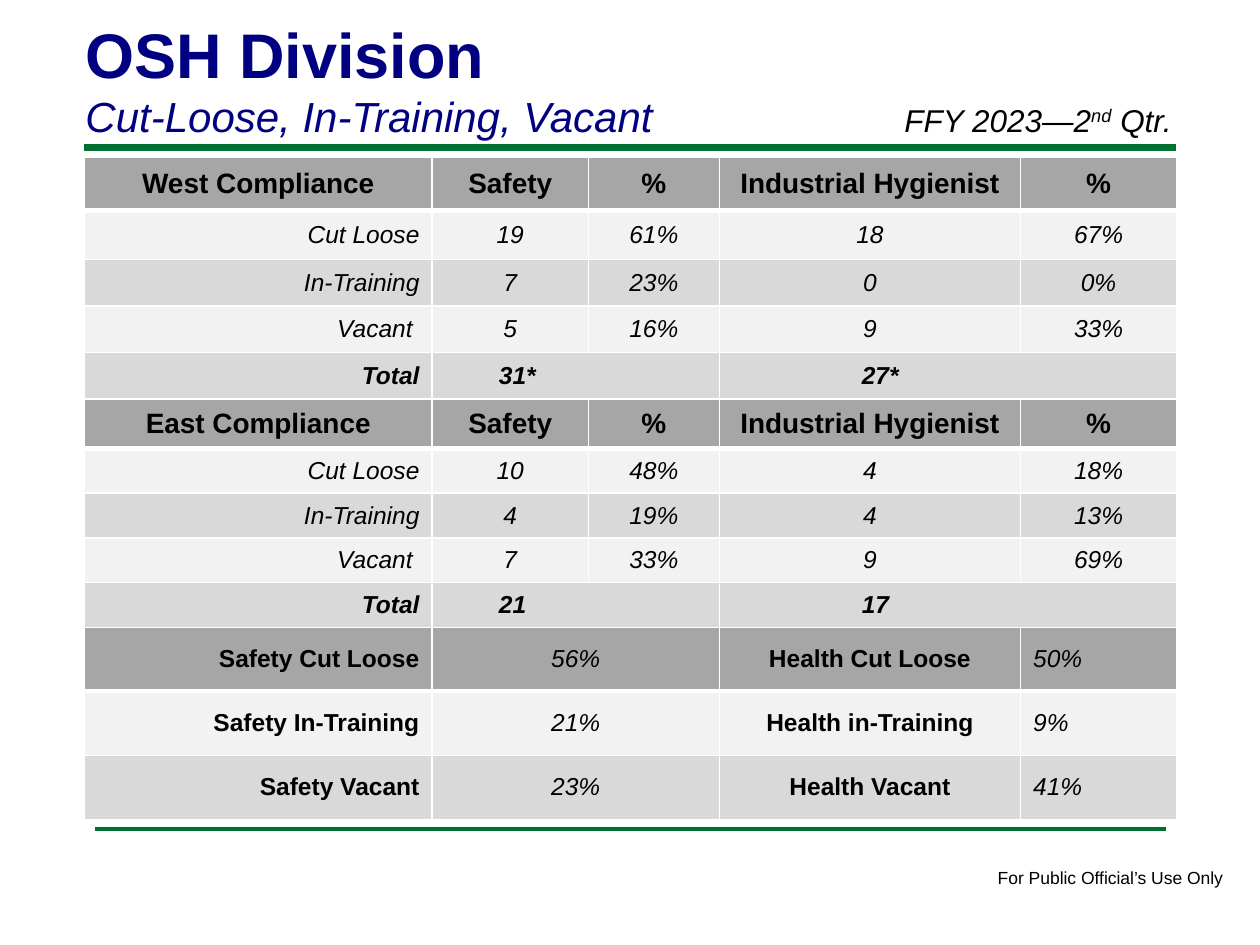
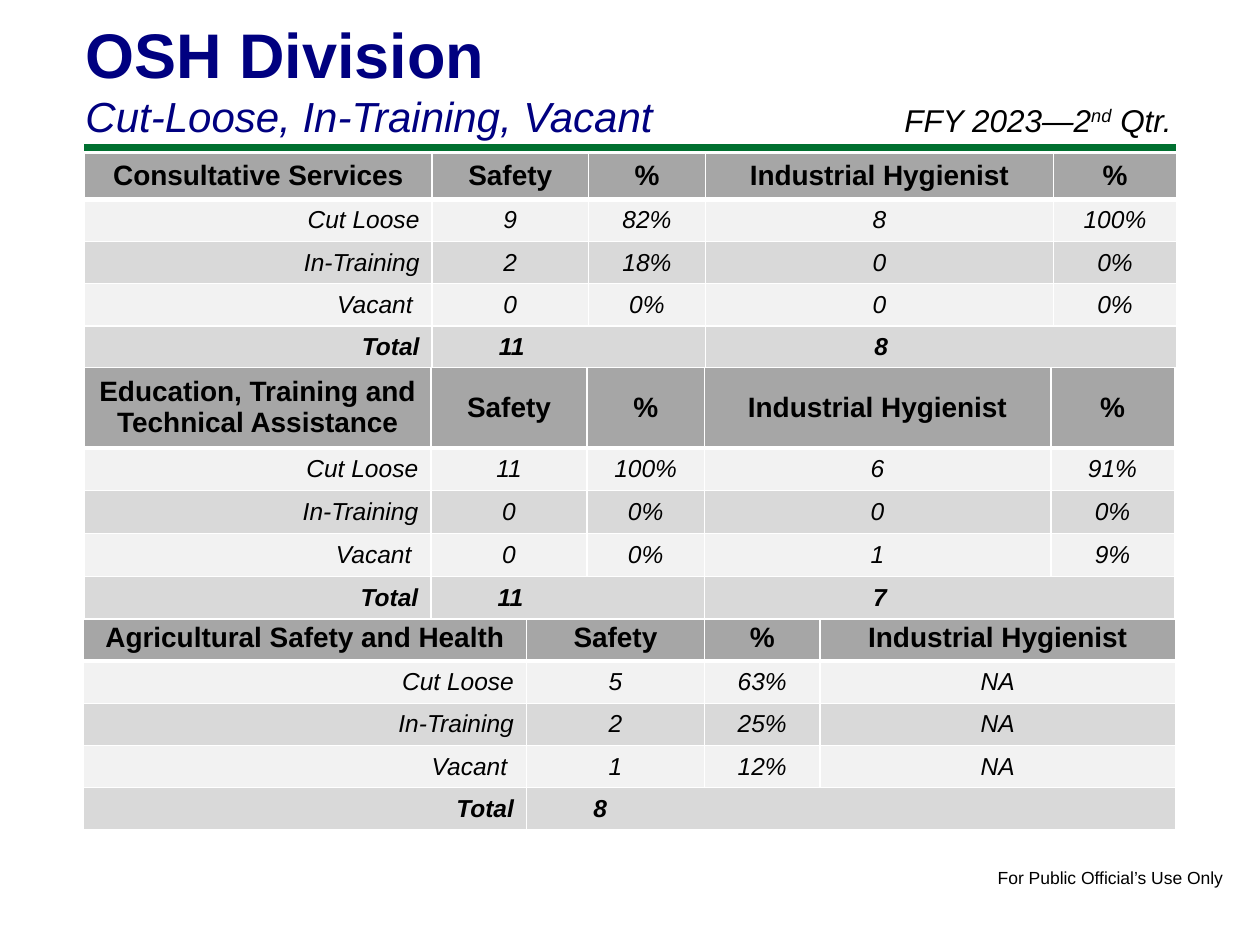
from dataclasses import dataclass
from typing import NamedTuple, Optional

from lxml.etree import SubElement
from pptx import Presentation
from pptx.dml.color import RGBColor
from pptx.enum.shapes import MSO_CONNECTOR
from pptx.enum.text import MSO_ANCHOR, PP_ALIGN
from pptx.oxml.ns import qn
from pptx.util import Inches, Length, Pt

# The slide is a grid of 100 columns by 75 rows.
GRID_COLUMNS, GRID_ROWS = 100, 75
SLIDE_WIDTH, SLIDE_HEIGHT = Inches(10), Inches(7.5)
FONT = "Arial"
COLORS = {
    "rule": "007030",
    "title": "000080",
    "text": "000000",
    "header": "A6A6A6",
    "odd": "F2F2F2",
    "even": "D9D9D9",
    "border": "FFFFFF",
}
THIN, THICK = 1, 3
LEFT, CENTER, RIGHT = PP_ALIGN.LEFT, PP_ALIGN.CENTER, PP_ALIGN.RIGHT
TABLE_LEFT = 6.7
STAFF_HEADINGS = ("Safety", "%", "Industrial Hygienist", "%")
STAFF_LABELS = ("Cut Loose", "In-Training", "Vacant ")

Row = tuple[Optional[str], ...]


class Span(NamedTuple):
    text: str
    size: int
    color: str = "text"
    bold: bool = False
    italic: bool = False
    raised: bool = False


class TextBox(NamedTuple):
    left: float
    top: float
    width: float
    height: float
    paras: list[list[Span]]
    anchor: MSO_ANCHOR = MSO_ANCHOR.TOP
    wrap: bool = True


class Rule(NamedTuple):
    left: float
    right: float
    row: float
    weight: int


class CellStyle(NamedTuple):
    size: int
    bold: bool
    italic: bool
    align: PP_ALIGN
    indent: float = 1


HEADING = CellStyle(16, True, False, CENTER)
LABEL = CellStyle(14, False, True, RIGHT)
VALUE = CellStyle(14, False, True, CENTER)
TOTAL_LABEL = CellStyle(14, True, True, RIGHT)
SUMMARY_STYLES = [
    CellStyle(14, True, False, RIGHT),
    VALUE,
    CellStyle(14, True, False, CENTER),
    CellStyle(14, False, True, LEFT),
]


@dataclass
class TableBlock:
    """A table whose None cells continue the cell to their left."""

    left: float
    top: float
    columns: list[float]
    heights: list[float]
    rows: list[Row]
    styles: list[list[CellStyle]]


def staffing(
    heading: str,
    top: float,
    columns: list[float],
    heights: list[float],
    counts: list[Row],
    totals: Row,
    hygienist_indent: float = 1,
    left: float = TABLE_LEFT,
) -> TableBlock:
    """One unit's safety and hygienist posts, closed by a row of totals."""
    values = len(columns) - 1
    rows = [(heading, *STAFF_HEADINGS[:values])]
    rows += [(label, *count) for label, count in zip(STAFF_LABELS, counts)]
    rows.append(("Total", *totals))
    safety_total = CellStyle(14, True, True, LEFT, 5.3)
    hygienist_total = safety_total._replace(indent=hygienist_indent)
    styles = [
        [HEADING] * len(columns),
        *[[LABEL] + [VALUE] * values for _ in counts],
        [TOTAL_LABEL] + [safety_total] * 2 + [hygienist_total] * (values - 2),
    ]
    return TableBlock(left, top, columns, heights, rows, styles)


SHARED_RULES = [Rule(6.7, 93.3, 11.7, 4), Rule(7.5, 92.5, 65.8, 2)]
SHARED_BOXES = [
    TextBox(78.2, 68.3, 20.1, 2.7,
            [[Span("For Public Official’s Use Only", 10)]], wrap=False),
    TextBox(5.8, 0.6, 82.5, 11.1, [
        [Span("OSH Division", 36, "title", bold=True)],
        [Span("Cut-Loose, In-Training, Vacant", 24, "title", italic=True)],
    ], MSO_ANCHOR.BOTTOM),
    TextBox(70.8, 7.5, 25, 4, [[
        Span("FFY 2023—2", 18, italic=True),
        Span("nd", 18, italic=True, raised=True),
        Span(" Qtr.", 18, italic=True),
    ]]),
]

COMPLIANCE_COLUMNS = [27.6, 12.4, 10.4, 23.9, 12.4]
SERVICE_COLUMNS = [27.6, 12.4, 9.3, 27.6, 9.8]
TRAINING_COLUMNS = [27.5, 12.4, 9.3, 27.5, 9.8]

COMPLIANCE_TABLES = [
    staffing(
        "West Compliance", 12.5, COMPLIANCE_COLUMNS, [4.2, 3.9] + [3.7] * 3,
        [("19", "61%", "18", "67%"), ("7", "23%", "0", "0%"), ("5", "16%", "9", "33%")],
        ("31*", None, "27*", None), 11.3,
    ),
    TableBlock(
        TABLE_LEFT, 49.75, [27.6, 22.8, 23.9, 12.4], [5.1] * 3,
        [
            ("Safety Cut Loose", "56%", "Health Cut Loose", "50%"),
            ("Safety In-Training", "21%", "Health in-Training", "9%"),
            ("Safety Vacant", "23%", "Health Vacant", "41%"),
        ],
        [SUMMARY_STYLES] * 3,
    ),
    staffing(
        "East Compliance", 31.7, COMPLIANCE_COLUMNS, [3.9] + [3.55] * 4,
        [("10", "48%", "4", "18%"), ("4", "19%", "4", "13%"), ("7", "33%", "9", "69%")],
        ("21", None, "17", None), 11.3,
    ),
]
SERVICE_TABLES = [
    staffing(
        "Consultative Services", 12.15, SERVICE_COLUMNS, [3.6] + [3.35] * 4,
        [("9", "82%", "8", "100%"), ("2", "18%", "0", "0%"), ("0", "0%", "0", "0%")],
        ("11", None, "8", None), 13.4,
    ),
    staffing(
        "Agricultural Safety and Health", 48.8, [35.2, 14.1, 9.2, 28.2],
        [3.6] + [3.35] * 4,
        [("5", "63%", "NA"), ("2", "25%", "NA"), ("1", "12%", "NA")],
        ("8", None, None), left=6.6,
    ),
    staffing(
        "Education, Training and Technical Assistance", 29.15, TRAINING_COLUMNS,
        [6.4] + [3.4] * 4,
        [("11", "100%", "6", "91%"), ("0", "0%", "0", "0%"), ("0", "0%", "1", "9%")],
        ("11", None, "7", None), 13.4,
    ),
]


def across(columns: float) -> Length:
    return Length(round(SLIDE_WIDTH * columns / GRID_COLUMNS))


def down(rows: float) -> Length:
    return Length(round(SLIDE_HEIGHT * rows / GRID_ROWS))


def rgb(name: str) -> RGBColor:
    return RGBColor.from_string(COLORS[name])


def add_span(para, span: Span) -> None:
    run = para.add_run()
    run.text = span.text
    formats = {"name": FONT, "size": Pt(span.size), "bold": span.bold, "italic": span.italic}
    for attribute, value in formats.items():
        setattr(run.font, attribute, value)
    run.font.color.rgb = rgb(span.color)
    if span.raised:
        run.font._element.set("baseline", "30000")


def draw_rule(page, rule: Rule) -> None:
    line = page.shapes.add_connector(
        MSO_CONNECTOR.STRAIGHT,
        across(rule.left), down(rule.row), across(rule.right), down(rule.row),
    )
    line.line.color.rgb = rgb("rule")
    line.line.width = Pt(rule.weight)
    SubElement(line._element.spPr, qn("a:effectLst"))


def draw_text(page, item: TextBox) -> None:
    box = page.shapes.add_textbox(
        across(item.left), down(item.top), across(item.width), down(item.height)
    )
    frame = box.text_frame
    frame.word_wrap = item.wrap
    frame.vertical_anchor = item.anchor
    for index, spans in enumerate(item.paras):
        para = frame.add_paragraph() if index else frame.paragraphs[0]
        for span in spans:
            add_span(para, span)


def set_borders(cell, top: int, bottom: int) -> None:
    properties = cell._tc.get_or_add_tcPr()
    weights = {"a:lnL": THIN, "a:lnR": THIN, "a:lnT": top, "a:lnB": bottom}
    for tag, weight in weights.items():
        line = SubElement(properties, qn(tag), w=str(Pt(weight)))
        fill = SubElement(line, qn("a:solidFill"))
        SubElement(fill, qn("a:srgbClr"), val=COLORS["border"])


def fill_cell(cell, row: int, text: Optional[str], style: CellStyle) -> None:
    set_borders(cell, THICK if row == 1 else THIN, THICK if row == 0 else THIN)
    band = "header" if row == 0 else "odd" if row % 2 else "even"
    cell.fill.solid()
    cell.fill.fore_color.rgb = rgb(band)
    cell.vertical_anchor = MSO_ANCHOR.MIDDLE
    cell.margin_left = across(style.indent)
    if text is not None:
        para = cell.text_frame.paragraphs[0]
        para.alignment = style.align
        add_span(para, Span(text, style.size, bold=style.bold, italic=style.italic))


def draw_table(page, block: TableBlock) -> None:
    table = page.shapes.add_table(
        len(block.rows), len(block.columns), across(block.left), down(block.top),
        across(sum(block.columns)), down(sum(block.heights)),
    ).table
    for column, width in zip(table.columns, block.columns):
        column.width = across(width)
    for row, height in zip(table.rows, block.heights):
        row.height = down(height)
    for row, (texts, styles) in enumerate(zip(block.rows, block.styles)):
        start = 0
        for column, (text, style) in enumerate(zip(texts, styles)):
            fill_cell(table.cell(row, column), row, text, style)
            if text is not None:
                start = column
            elif column + 1 == len(texts) or texts[column + 1] is not None:
                table.cell(row, start).merge(table.cell(row, column))


def main() -> None:
    deck = Presentation()
    deck.slide_width, deck.slide_height = SLIDE_WIDTH, SLIDE_HEIGHT
    for blocks in (COMPLIANCE_TABLES, SERVICE_TABLES):
        page = deck.slides.add_slide(deck.slide_layouts[6])
        for rule in SHARED_RULES:
            draw_rule(page, rule)
        for item in SHARED_BOXES:
            draw_text(page, item)
        for block in blocks:
            draw_table(page, block)
    deck.save("out.pptx")


if __name__ == "__main__":
    main()
